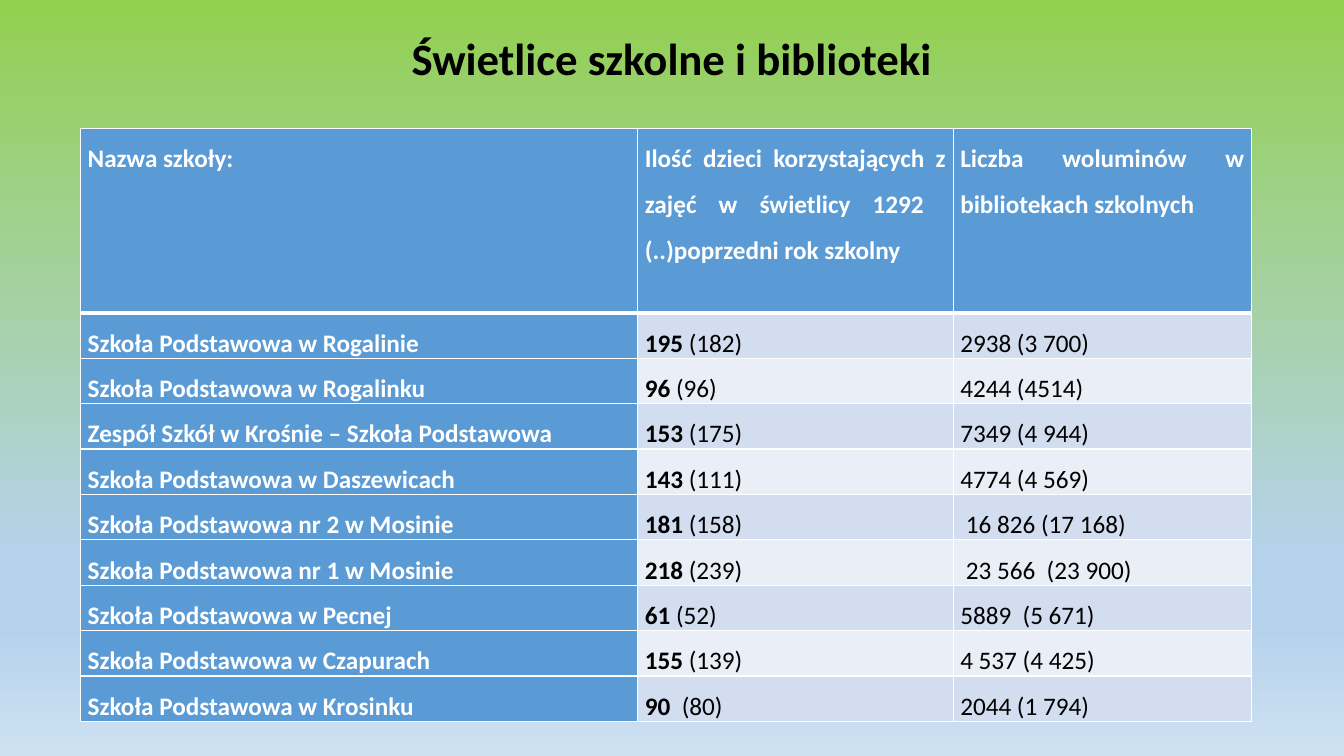
from copy import deepcopy

from lxml import etree
from pptx import Presentation
from pptx import util as u
from pptx.dml.color import RGBColor
from pptx.enum import text
from pptx.oxml.ns import qn

# Content
TITLE = "Świetlice szkolne i biblioteki"
HEADER = [
    "Nazwa szkoły:",
    "Ilość dzieci korzystających z zajęć w świetlicy 1292  (..)poprzedni rok szkolny",
    "Liczba woluminów w bibliotekach szkolnych",
]
# School, children this year, children last year, library volumes
SCHOOLS = [
    ("Szkoła Podstawowa w Rogalinie", "195 ", "(182)", "2938 (3 700)"),
    ("Szkoła Podstawowa w Rogalinku", "96 ", "(96)", "4244 (4514)"),
    ("Zespół Szkół w Krośnie – Szkoła Podstawowa", "153 ", "(175)", "7349 (4 944)"),
    ("Szkoła Podstawowa w Daszewicach", "143 ", "(111)", "4774 (4 569)"),
    ("Szkoła Podstawowa nr 2 w Mosinie", "181 ", "(158)", " 16 826 (17 168)"),
    ("Szkoła Podstawowa nr 1 w Mosinie", "218 ", "(239)", " 23 566  (23 900)"),
    ("Szkoła Podstawowa w Pecnej", "61 ", "(52)", "5889  (5 671)"),
    ("Szkoła Podstawowa w Czapurach", "155 ", "(139) ", "4 537 (4 425)"),
    ("Szkoła Podstawowa w Krosinku", "90  ", "(80)", "2044 (1 794)"),
]

# Style
FONT = "Calibri"
BLACK, WHITE, BLUE = "000000", "FFFFFF", "5B9BD5"
BANDS = ["D2DEEF", "EAEFF7"]
SKY = [(0, "92D050"), (0.74, "B5D2EC"), (0.83, "B5D2EC"), (1, "CEE1F2")]
COLS = [14.04, 7.95, 7.52]
HEADER_H, ROW_H = 4.65, 1.09


def rgb(value):
    return RGBColor.from_string(value)


def add_run(p, words, size, color, bold):
    r = p.add_run()
    r.text = words
    r.font.name, r.font.size, r.font.bold = FONT, u.Pt(size), bold
    r.font.color.rgb = rgb(color)


def set_borders(cell, widths):
    tcPr = cell._tc.get_or_add_tcPr()
    for side, width in zip("LRTB", widths):
        ln = etree.SubElement(tcPr, qn(f"a:ln{side}"), w=str(u.Pt(width)))
        fill = etree.SubElement(ln, qn("a:solidFill"))
        etree.SubElement(fill, qn("a:srgbClr"), val=WHITE)


def fill_cell(cell, runs, color, widths):
    set_borders(cell, widths)
    cell.fill.solid()
    cell.fill.fore_color.rgb = rgb(color)
    cell.margin_left = cell.margin_right = u.Cm(0.18)
    cell.margin_top = cell.margin_bottom = 0
    p = cell.text_frame.paragraphs[0]
    p.alignment = text.PP_ALIGN.JUSTIFY
    p.line_spacing, p.space_after = 1.5, u.Pt(10)
    for words, font_color, bold in runs:
        add_run(p, words, 18, font_color, bold)


prs = Presentation()
prs.slide_width, prs.slide_height = u.Cm(33.87), u.Cm(19.05)
s = prs.slides.add_slide(prs.slide_layouts[6])

# Background gradient, top to bottom
fill = s.background.fill
fill.gradient()
fill.gradient_angle = 270
stops = s.element.find(".//" + qn("a:gsLst"))
while len(stops) < len(SKY):
    stops.append(deepcopy(stops[0]))
for stop, (position, color) in zip(fill.gradient_stops, SKY):
    stop.position = position
    stop.color.rgb = rgb(color)

# Title
tf = s.shapes.add_textbox(u.Cm(2.33), u.Cm(0.38), u.Cm(29.21), u.Cm(2.31)).text_frame
tf.word_wrap = True
tf.vertical_anchor = text.MSO_ANCHOR.MIDDLE
p = tf.paragraphs[0]
p.alignment, p.line_spacing = text.PP_ALIGN.CENTER, 0.9
add_run(p, TITLE, 32, BLACK, True)

# Table
table_h = HEADER_H + ROW_H * len(SCHOOLS)
table = s.shapes.add_table(len(SCHOOLS) + 1, len(COLS), u.Cm(2.03), u.Cm(3.23),
                           u.Cm(sum(COLS)), u.Cm(table_h)).table
for column, width in zip(table.columns, COLS):
    column.width = u.Cm(width)
for i, row in enumerate(table.rows):
    row.height = u.Cm(ROW_H if i else HEADER_H)

for j, words in enumerate(HEADER):
    fill_cell(table.cell(0, j), [(words, WHITE, True)], BLUE, (1, 1, 1, 3))
for i, (school, children, previous, volumes) in enumerate(SCHOOLS, 1):
    band = BANDS[(i - 1) % 2]
    widths = (1, 1, 3 if i == 1 else 1, 1)
    fill_cell(table.cell(i, 0), [(school, WHITE, True)], BLUE, widths)
    fill_cell(table.cell(i, 1), [(children, BLACK, True), (previous, BLACK, False)], band, widths)
    fill_cell(table.cell(i, 2), [(volumes, BLACK, False)], band, widths)

prs.save("out.pptx")
